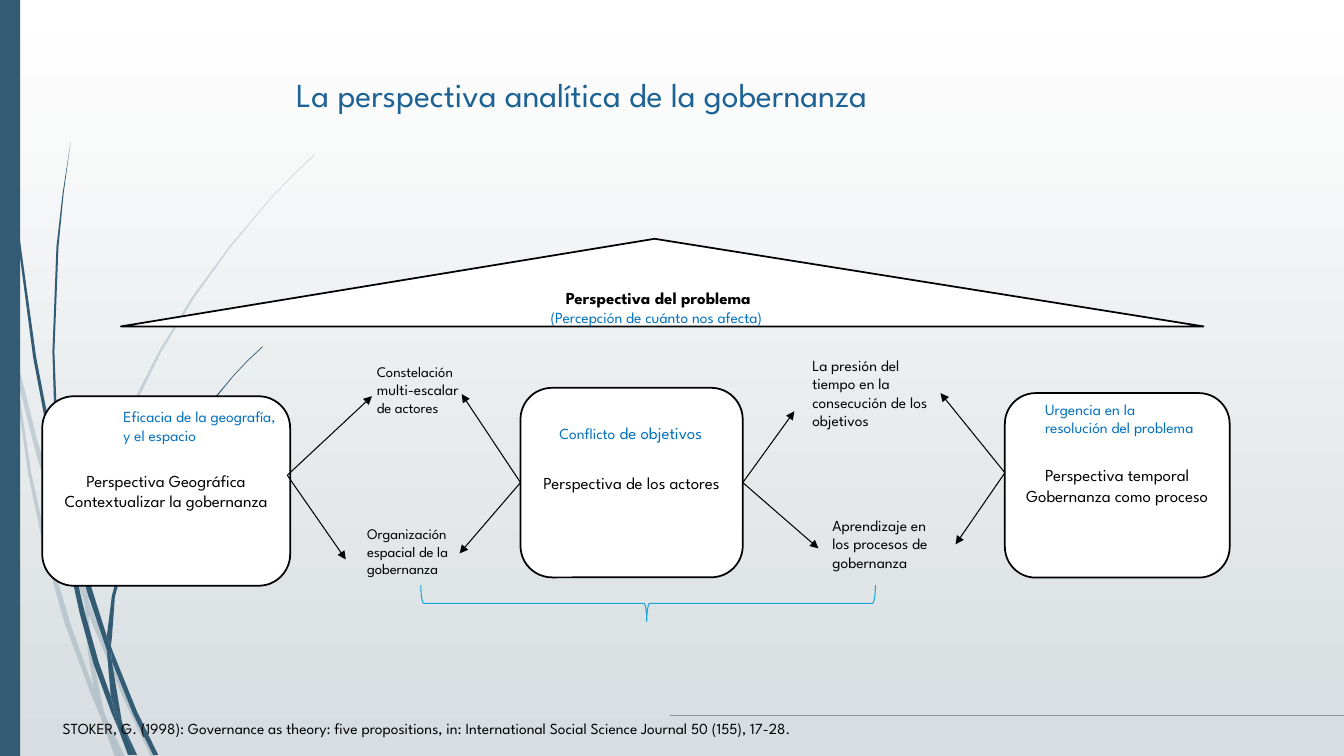
from lxml import etree
from pptx import Presentation
from pptx.dml.color import RGBColor
from pptx.enum import shapes, text
from pptx.oxml import ns
from pptx.util import Pt

FONT = "League Spartan"
STALK_UNIT = Pt(0.72)
COLORS = {
    "black": "000000", "white": "FFFFFF", "mist": "D7DDE0", "slate": "335B74",
    "title": "1D6294", "blue": "0070C0", "brace": "1BA5DA", "rule": "8A9499",
}
PALE_STALKS = [
    [(11, 350), (9, 322), (0, 282), (0, 299), (10, 344)],
    [(58, 522), (84, 599), (85, 586), (62, 520), (37, 437), (14, 345), (17, 376), (36, 451)],
    [(92, 607), (88, 596), (88, 610), (123, 694), (150, 751), (155, 751), (127, 692)],
    [(119, 751), (124, 751), (105, 711)],
    [(93, 683), (70, 619), (48, 545), (31, 469), (17, 376), (11, 350), (28, 470),
     (44, 547), (65, 621), (92, 693), (101, 714), (99, 707)],
    [(84, 599), (87, 646), (93, 683), (96, 692), (105, 711), (103, 706), (91, 646),
     (88, 610), (88, 608)],
    [(88, 584), (93, 522), (110, 462), (133, 404), (160, 349), (193, 295), (229, 245),
     (268, 198), (290, 175), (312, 154), (312, 153), (289, 175), (268, 197), (228, 244),
     (191, 294), (158, 348), (130, 403), (107, 461), (90, 521), (85, 584), (85, 586), (88, 596)],
    [(101, 714), (114, 751), (119, 751)],
    [(88, 608), (88, 610), (88, 596), (85, 586), (84, 599)],
    [(96, 692), (93, 683), (99, 707), (101, 714), (119, 751), (105, 711)],
]
DARK_STALKS = [
    [(7, 110), (17, 233), (33, 355), (56, 477), (57, 481), (55, 457), (55, 453), (36, 355),
     (19, 232), (8, 109), (5, 48), (4, 0), (3, 0), (4, 48)],
    [(88, 592), (106, 645), (106, 633), (106, 631), (93, 590), (75, 532), (60, 472),
     (64, 505), (75, 549)],
    [(113, 649), (110, 641), (111, 656), (132, 708), (152, 749), (157, 749), (136, 706)],
    [(110, 691), (98, 657), (84, 607), (72, 556), (64, 505), (57, 477), (68, 557),
     (79, 608), (93, 659), (111, 708), (117, 722), (116, 717)],
    [(60, 472), (58, 453), (54, 349), (58, 245), (63, 193), (70, 141), (62, 193),
     (56, 245), (52, 349), (55, 449)],
    [(133, 749), (136, 749), (122, 719)],
    [(111, 633), (114, 592), (125, 552), (140, 513), (158, 476), (180, 440), (205, 406),
     (231, 374), (245, 359), (261, 344), (260, 344), (245, 358), (231, 373), (204, 405),
     (179, 439), (156, 474), (137, 511), (122, 551), (111, 591), (106, 631), (110, 641)],
    [(117, 722), (127, 749), (131, 749)],
    [(106, 645), (110, 691), (116, 706), (122, 719), (121, 716), (111, 656), (109, 651)],
    [(106, 645), (109, 651), (111, 656), (110, 641), (106, 631), (106, 633)],
    [(116, 706), (110, 691), (116, 717), (117, 722), (130, 749), (133, 749), (122, 719)],
]


def rgb(name):
    return RGBColor.from_string(COLORS[name])


def style(shape, fill=None, line=None, width=1.25):
    shape.shadow.inherit = False
    if fill:
        shape.fill.solid()
        shape.fill.fore_color.rgb = rgb(fill)
    else:
        shape.fill.background()
    if line:
        shape.line.color.rgb = rgb(line)
        shape.line.width = Pt(width)
    else:
        shape.line.fill.background()


def add_stalk(slide, outline, alpha=None):
    builder = slide.shapes.build_freeform(*outline[0], scale=STALK_UNIT)
    builder.add_line_segments(outline[1:], close=True)
    shape = builder.convert_to_shape()
    style(shape, "slate")
    if alpha:
        color = shape._element.spPr.find(ns.qn("a:solidFill"))[0]
        etree.SubElement(color, ns.qn("a:alpha"), val=str(alpha * 1000))


def add_shape(slide, kind, box, fill=None, line=None, width=1.25):
    shape = slide.shapes.add_shape(kind, *map(Pt, box))
    style(shape, fill, line, width)
    return shape


def write(shape, paragraphs, centered=False, anchor=text.MSO_ANCHOR.TOP):
    frame = shape.text_frame
    frame.word_wrap = True
    frame.vertical_anchor = anchor
    frame.text = "\n".join("".join(run[0] for run in runs) for runs in paragraphs)
    for paragraph, runs in zip(frame.paragraphs, paragraphs):
        paragraph.alignment = text.PP_ALIGN.CENTER if centered else text.PP_ALIGN.LEFT
        paragraph.text = runs[0][0]
        for words, *_ in runs[1:]:
            paragraph.add_run().text = words
        for run, (_, size, color, *bold) in zip(paragraph.runs, runs):
            run.font.name = FONT
            run.font.size = Pt(size)
            run.font.bold = bool(bold)
            run.font.color.rgb = rgb(color)


def add_label(slide, box, *runs, centered=False):
    label = slide.shapes.add_textbox(*map(Pt, box))
    write(label, [runs], centered)


def add_pillar(slide, box, *lines):
    pillar = add_shape(slide, shapes.MSO_SHAPE.ROUNDED_RECTANGLE, box, "white", "black")
    write(pillar, [[(line, 12, "black")] for line in lines], True, text.MSO_ANCHOR.MIDDLE)
    return pillar


def add_line(slide, start, end, color, arrow=False):
    line = slide.shapes.add_connector(shapes.MSO_CONNECTOR.STRAIGHT, *map(Pt, start + end))
    line.line.color.rgb = rgb(color)
    line.line.width = Pt(0.75)
    if arrow:
        etree.SubElement(line.line._get_or_add_ln(), ns.qn("a:tailEnd"), type="triangle")
    etree.SubElement(line._element.spPr, ns.qn("a:effectLst"))
    return line


def add_backdrop(slide):
    fill = slide.background.fill
    fill.gradient()
    fill.gradient_angle = 270
    for stop, color in zip(fill.gradient_stops, ("white", "mist")):
        stop.color.rgb = rgb(color)
    for outline in PALE_STALKS:
        add_stalk(slide, outline, alpha=20)
    for outline in DARK_STALKS:
        add_stalk(slide, outline)
    add_shape(slide, shapes.MSO_SHAPE.RECTANGLE, (0, 0, 14.4, 540), "slate")
    add_line(slide, (478.8, 511.2), (960, 511.2), "rule")


def main():
    presentation = Presentation()
    presentation.slide_width, presentation.slide_height = Pt(960), Pt(540)
    slide = presentation.slides.add_slide(presentation.slide_layouts[6])
    add_backdrop(slide)

    add_label(slide, (204.5, 49, 702, 100.8),
              ("La perspectiva analítica de la gobernanza", 24, "title"))
    add_label(slide, (37.6, 510, 773.3, 20.9),
              ("STOKER, G. (1998): Governance as theory: five propositions, in: "
               "International Social Science Journal 50 (155), 17-28.", 11, "black"))

    add_pillar(slide, (30.2, 283, 177.1, 135.4),
               "Perspectiva Geográfica", "Contextualizar la gobernanza")
    add_pillar(slide, (717.8, 280.8, 160.6, 131.8),
               "Perspectiva temporal", "Gobernanza como proceso")
    actors = add_pillar(slide, (371.8, 277, 158.8, 135.4), "Perspectiva de los actores")

    roof = add_shape(slide, shapes.MSO_SHAPE.ISOSCELES_TRIANGLE,
                     (86.4, 170.6, 773.3, 62.6), "white", "black")
    roof.adjustments[0] = 0.493
    write(roof, [[("Perspectiva del problema", 12, "black", True)],
                 [("(Percepción de cuánto nos afecta) ", 11, "blue")]], True)

    geography, time = (205.2, 339.5), (717.8, 337.7)
    for start, end in ((geography, (265.7, 283)), (geography, (247, 399.6)),
                       (time, (671.8, 280.8)), (time, (682.6, 388.8))):
        add_line(slide, start, end, "black", arrow=True)
    left_side, right_side = (371.8, 344.7), (530.6, 344.7)
    for side, start, end in ((1, left_side, (329.8, 281.5)), (1, left_side, (328.3, 395.3)),
                             (3, right_side, (567.4, 293.8)), (3, right_side, (584.6, 391.7))):
        arrow = add_line(slide, start, end, "black", arrow=True)
        arrow.begin_connect(actors, side)

    add_label(slide, (388.3, 298.1, 124.6, 21.6),
              ("Conflicto", 11, "blue"), (" de objetivos", 12, "blue"), centered=True)
    add_label(slide, (262.1, 255.6, 77, 46.1), ("Constelación ", 10.5, "black"),
              ("multi-escalar", 11, "black"), (" de actores", 10.5, "black"))
    for box, words, size, color in (
            ((255.2, 371.5, 77, 45.4), "Organización espacial de la gobernanza", 10.5, "black"),
            ((573.1, 250.6, 109.4, 60.5),
             "La presión del tiempo en la consecución de los objetivos", 11, "black"),
            ((587.5, 365, 95, 47.5), "Aprendizaje en los procesos de gobernanza", 11, "black"),
            ((81.1, 287.3, 126.7, 33.8), "Eficacia de la geografía, y el espacio", 11, "blue"),
            ((739.4, 282.2, 124, 33.8), "Urgencia en la resolución del problema", 11, "blue")):
        add_label(slide, box, (words, size, color))

    brace = add_shape(slide, shapes.MSO_SHAPE.RIGHT_BRACE, (450, 268.6, 25.9, 324.7),
                      line="brace", width=0.75)
    brace.rotation = 90
    brace.adjustments[0], brace.adjustments[1] = 0.083, 0.503

    presentation.save("out.pptx")


if __name__ == "__main__":
    main()
